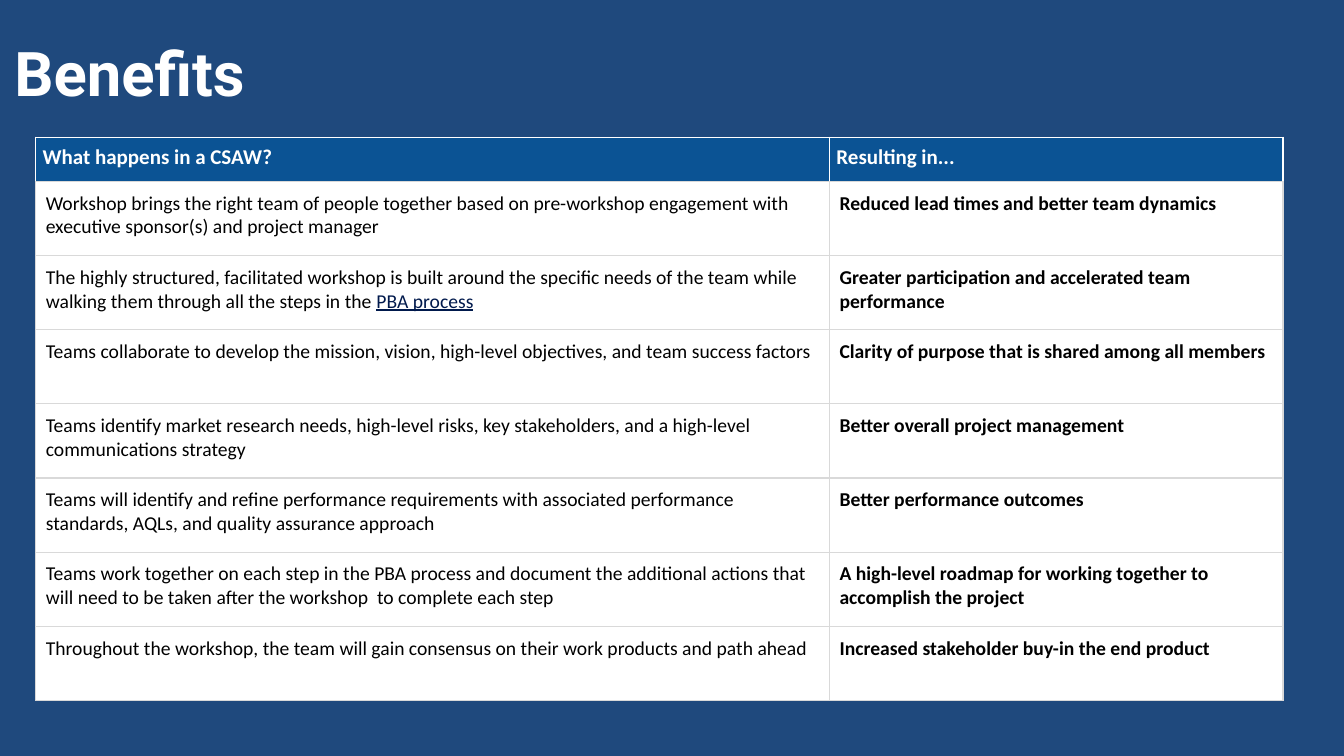
from dataclasses import dataclass

from lxml import etree
from pptx import Presentation
from pptx.dml.color import RGBColor
from pptx.enum.text import MSO_ANCHOR
from pptx.oxml.ns import qn
from pptx.slide import Slide
from pptx.table import _Cell
from pptx.util import Pt

MIDDLE = MSO_ANCHOR.MIDDLE
NAVY, BLUE, LINK = "1F497D", "0B5394", "00194C"
WHITE, BLACK, GREY = "FFFFFF", "000000", "D9D9D9"
HEADER_HEIGHT, BENEFIT_HEIGHT = 31.5, 53
COLUMN_WIDTHS = (567, 324)
TABLE_LEFT, TABLE_TOP = 25.5, 98


@dataclass(frozen=True)
class Benefit:
    activity: str
    result: str
    linked: str = ""


@dataclass(frozen=True)
class CellStyle:
    size: float
    color: str
    bold: bool
    fill: str
    inset: float
    edge: str


HEADER = CellStyle(15, WHITE, True, BLUE, 5, WHITE)
ACTIVITY = CellStyle(14, BLACK, False, WHITE, 7.2, GREY)
RESULT = CellStyle(14, BLACK, True, WHITE, 7.2, GREY)

HEADINGS = Benefit("What happens in a CSAW?", "Resulting in...")
BENEFITS = [
    Benefit("Workshop brings the right team of people together based on pre-workshop "
            "engagement with executive sponsor(s) and project manager",
            "Reduced lead times and better team dynamics"),
    Benefit("The highly structured, facilitated workshop is built around the specific needs "
            "of the team while walking them through all the steps in the ",
            "Greater participation and accelerated team performance",
            "PBA process"),
    Benefit("Teams collaborate to develop the mission, vision, high-level objectives, "
            "and team success factors",
            "Clarity of purpose that is shared among all members"),
    Benefit("Teams identify market research needs, high-level risks, key stakeholders, "
            "and a high-level communications strategy",
            "Better overall project management"),
    Benefit("Teams will identify and refine performance requirements with associated "
            "performance standards, AQLs, and quality assurance approach",
            "Better performance outcomes"),
    Benefit("Teams work together on each step in the PBA process and document the additional "
            "actions that will need to be taken after the workshop  to complete each step",
            "A high-level roadmap for working together to accomplish the project"),
    Benefit("Throughout the workshop, the team will gain consensus on their work products "
            "and path ahead",
            "Increased stakeholder buy-in the end product"),
]


def rgb(color: str) -> RGBColor:
    return RGBColor.from_string(color)


def add_border(cell: _Cell, side: str, color: str) -> None:
    properties = cell._tc.get_or_add_tcPr()
    line = etree.SubElement(properties, qn(f"a:{side}"), w=str(Pt(1)))
    fill = etree.SubElement(line, qn("a:solidFill"))
    etree.SubElement(fill, qn("a:srgbClr"), val=color)


def fill_cell(cell: _Cell, text: str, style: CellStyle, linked: str = "") -> None:
    for side in ("lnL", "lnR", "lnT"):
        add_border(cell, side, style.edge)
    add_border(cell, "lnB", GREY)
    cell.fill.solid()
    cell.fill.fore_color.rgb = rgb(style.fill)
    cell.margin_left = cell.margin_right = Pt(style.inset)
    cell.margin_top = cell.margin_bottom = Pt(style.inset)
    paragraph = cell.text_frame.paragraphs[0]
    paragraph.font.name = "Calibri"
    paragraph.font.size = Pt(style.size)
    paragraph.font.bold = style.bold
    paragraph.font.color.rgb = rgb(style.color)
    paragraph.add_run().text = text
    if linked:
        link = paragraph.add_run()
        link.text = linked
        link.font.underline = True
        link.font.color.rgb = rgb(LINK)


def add_title(slide: Slide) -> None:
    frame = slide.shapes.add_textbox(Pt(0.7), Pt(24.5), Pt(894), Pt(60.5)).text_frame
    frame.word_wrap = True
    frame.vertical_anchor = MIDDLE
    frame.margin_left = frame.margin_right = Pt(9.6)
    frame.margin_top = frame.margin_bottom = Pt(9.6)
    title = frame.paragraphs[0]
    title.text = "Benefits"
    title.line_spacing = 0.9
    title.font.name = "Roboto"
    title.font.size = Pt(44)
    title.font.bold = True
    title.font.color.rgb = rgb(WHITE)


def add_benefits(slide: Slide) -> None:
    heights = [HEADER_HEIGHT] + [BENEFIT_HEIGHT] * len(BENEFITS)
    table = slide.shapes.add_table(
        len(heights), len(COLUMN_WIDTHS), Pt(TABLE_LEFT), Pt(TABLE_TOP),
        Pt(sum(COLUMN_WIDTHS)), Pt(sum(heights))).table
    table.first_row = table.horz_banding = False
    for column, width in zip(table.columns, COLUMN_WIDTHS):
        column.width = Pt(width)
    for row, height in zip(table.rows, heights):
        row.height = Pt(height)
    for index, benefit in enumerate([HEADINGS, *BENEFITS]):
        left, right = (ACTIVITY, RESULT) if index else (HEADER, HEADER)
        fill_cell(table.cell(index, 0), benefit.activity, left, benefit.linked)
        fill_cell(table.cell(index, 1), benefit.result, right)


def main() -> None:
    deck = Presentation()
    deck.slide_width, deck.slide_height = Pt(960), Pt(540)
    slide = deck.slides.add_slide(deck.slide_layouts[6])
    slide.background.fill.solid()
    slide.background.fill.fore_color.rgb = rgb(NAVY)
    add_title(slide)
    add_benefits(slide)
    deck.save("out.pptx")


if __name__ == "__main__":
    main()
